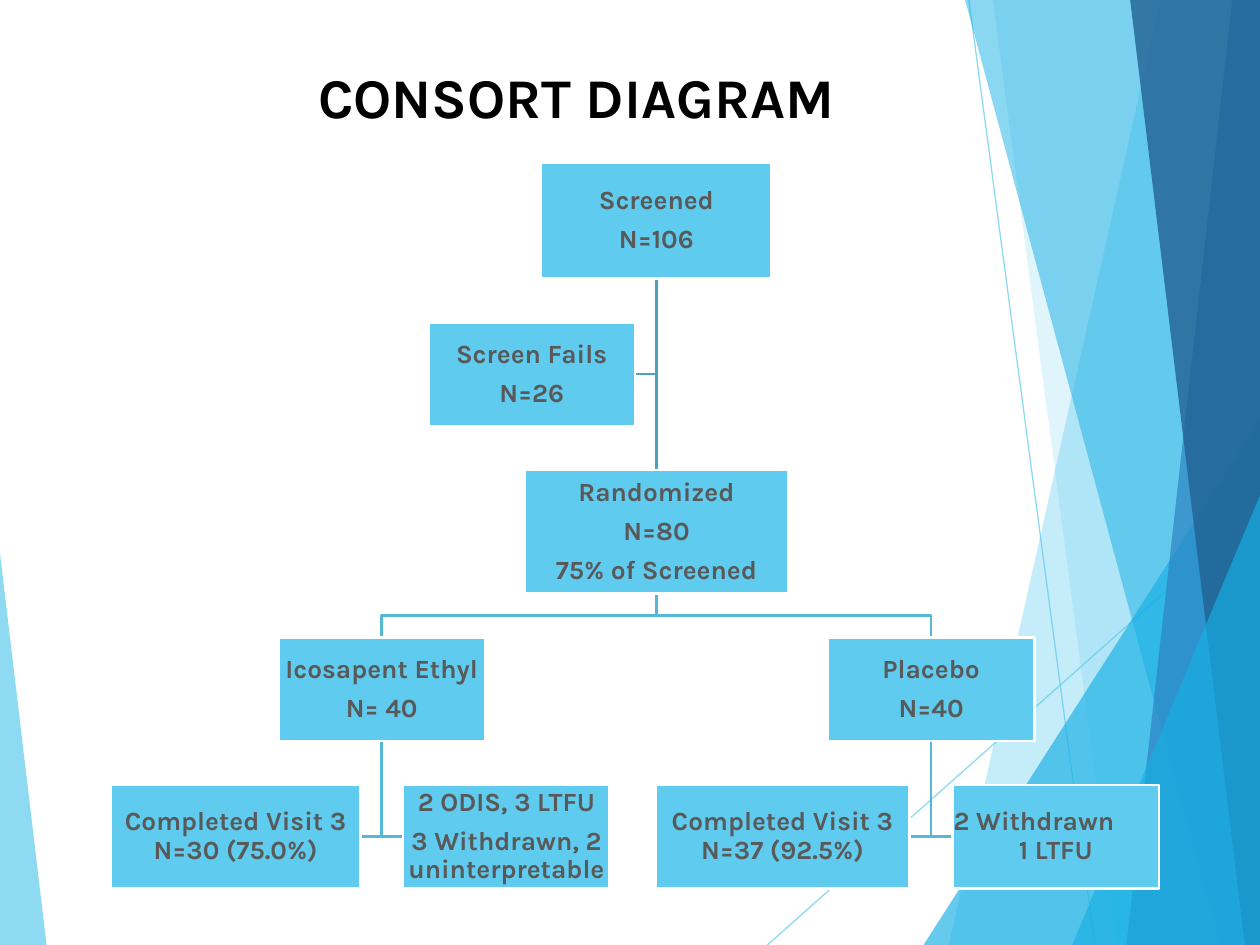
from lxml.etree import SubElement
from pptx import Presentation
from pptx.dml.color import RGBColor
from pptx.enum.shapes import MSO_CONNECTOR as Connector, MSO_SHAPE as Shape
from pptx.enum.text import MSO_ANCHOR as Anchor, PP_ALIGN as Align
from pptx.oxml.ns import qn
from pptx.util import Inches, Pt

SKY = RGBColor(0x5F, 0xCB, 0xEF)
CYAN = RGBColor(0x17, 0xB0, 0xE4)
BLUE = RGBColor(0x2E, 0x83, 0xC3)
NAVY = RGBColor(0x22, 0x62, 0x92)
TRUNK = RGBColor(0x4C, 0xA3, 0xBF)
BRANCH = RGBColor(0x56, 0xB8, 0xD9)
GREY = RGBColor(0x59, 0x59, 0x59)
BLACK = RGBColor(0, 0, 0)
WHITE = RGBColor(0xFF, 0xFF, 0xFF)
WIDTH, HEIGHT = 10, 7.5

# Background: rays (from, to); facets run from a slanted left edge to the slide's
# right edge (top x, bottom x); triangles stand on the bottom (left, top, width, apex)
RAYS = [((7.69, 0), (8.69, HEIGHT)), ((WIDTH, 4.03), (6.09, HEIGHT))]
BACKDROP = [
    ("facet", (9.21, 7.53), SKY, 36),
    ("facet", (7.88, 8.87), SKY, 20),
    ("triangle", (7.33, 3.33, 2.67, 1), CYAN, 66),
    ("facet", (7.66, 9.68), CYAN, 50),
    ("facet", (9.78, 8.94), BLUE, 70),
    ("facet", (8.97, 9.88), NAVY, 80),
    ("triangle", (8.51, 3.93, 1.49, 1), CYAN, 66),
    ("triangle", (0, 4.39, 0.37, 0), SKY, 70),
]

# Chart: row heights, column axes, boxes (key, row, axis, side of axis, width, lines)
TITLE = "CONSORT DIAGRAM"
TOP, ROW_GAP, AXIS_GAP = 1.29, 0.35, 0.17
ROW_HEIGHTS = [0.92, 0.82, 0.98, 0.82, 0.82]
MAIN, ACTIVE, CONTROL = 5.21, 3.03, 7.39
BOXES = [
    ("screened", 0, MAIN, 0, 1.83, ["Screened", "N=106"]),
    ("randomized", 2, MAIN, 0, 2.09, ["Randomized", "N=80", "75% of Screened"]),
    ("active", 3, ACTIVE, 0, 1.64, ["Icosapent Ethyl", "N= 40"]),
    ("active done", 4, ACTIVE, -1, 1.98, ["Completed Visit 3 N=30 (75.0%)"]),
    ("active lost", 4, ACTIVE, 1, 1.64,
     ["2 ODIS, 3 LTFU", "3 Withdrawn, 2 uninterpretable"]),
    ("placebo", 3, CONTROL, 0, 1.64, ["Placebo", "N=40"]),
    ("placebo done", 4, CONTROL, -1, 2.02, ["Completed Visit 3 N=37 (92.5%)"]),
    ("placebo lost", 4, CONTROL, 1, 1.64, ["2 Withdrawn", "1 LTFU"]),
    ("fails", 1, MAIN, -1, 1.64, ["Screen Fails", "N=26"]),
]
FORKS = [("randomized", "active"), ("randomized", "placebo")]
ELBOWS = [
    ("screened", "fails", TRUNK),
    ("active", "active done", BRANCH), ("active", "active lost", BRANCH),
    ("placebo", "placebo done", BRANCH), ("placebo", "placebo lost", BRANCH),
]

deck = Presentation()
deck.slide_width, deck.slide_height = Inches(WIDTH), Inches(HEIGHT)
slide = deck.slides.add_slide(deck.slide_layouts[6])
shapes = slide.shapes


def set_alpha(element, percent):
    colour = next(element.iter(qn("a:srgbClr")))
    SubElement(colour, qn("a:alpha"), val=str(percent * 1000))


def polyline(points, close):
    builder = shapes.build_freeform(*points[0])
    builder.add_line_segments(points[1:], close=close)
    outline = builder.convert_to_shape()
    outline.shadow.inherit = False
    return outline


def straight(start, end, colour, weight):
    line = shapes.add_connector(Connector.STRAIGHT, *start, *end)
    line.line.color.rgb, line.line.width = colour, Pt(weight)
    SubElement(line._element.spPr, qn("a:effectLst"))
    return line


def write(paragraph, text, size, colour):
    run = paragraph.add_run()
    run.text = text
    run.font.color.rgb = colour
    paragraph.alignment = Align.CENTER
    for name, value in {"name": "Karla", "size": Pt(size), "bold": True}.items():
        setattr(run.font, name, value)


# Background
for start, end in RAYS:
    ray = straight(map(Inches, start), map(Inches, end), SKY, 0.75)
    set_alpha(ray._element, 70)
for kind, place, colour, alpha in BACKDROP:
    if kind == "facet":
        top_x, bottom_x = place
        corners = [(top_x, 0), (WIDTH, 0), (WIDTH, HEIGHT), (bottom_x, HEIGHT)]
        piece = polyline([(Inches(x), Inches(y)) for x, y in corners], True)
    else:
        left, top, width, apex = place
        piece = shapes.add_shape(Shape.ISOSCELES_TRIANGLE, Inches(left), Inches(top),
                                 Inches(width), Inches(HEIGHT - top))
        piece.adjustments[0] = apex
        piece.shadow.inherit = False
    piece.fill.solid()
    piece.fill.fore_color.rgb = colour
    piece.line.fill.background()
    set_alpha(piece._element, alpha)

# Title
title = shapes.add_textbox(Inches(1.05), Inches(0.45), Inches(7.05), Inches(0.7))
title.text_frame.word_wrap = True
write(title.text_frame.paragraphs[0], TITLE, 32, BLACK)

# Boxes
row_tops = [TOP + sum(ROW_HEIGHTS[:i]) + i * ROW_GAP for i in range(len(ROW_HEIGHTS))]
boxes = {}
for key, row, axis, side, width, lines in BOXES:
    left = axis - width / 2 + side * (AXIS_GAP + width / 2)
    box = shapes.add_shape(Shape.RECTANGLE, Inches(left), Inches(row_tops[row]),
                           Inches(width), Inches(ROW_HEIGHTS[row]))
    boxes[key] = box
    box.shadow.inherit = False
    box.fill.solid()
    box.fill.fore_color.rgb = SKY
    box.line.color.rgb, box.line.width = WHITE, Pt(1.5)
    frame = box.text_frame
    frame.word_wrap, frame.vertical_anchor = True, Anchor.MIDDLE
    for edge in ("left", "top", "right", "bottom"):
        setattr(frame, f"margin_{edge}", Inches(0.01))
    for i, text in enumerate(lines):
        paragraph = frame.paragraphs[0] if i == 0 else frame.add_paragraph()
        write(paragraph, text, 15, GREY)
        paragraph.line_spacing, paragraph.space_after = 0.9, Pt(6)

# The withdrawal note starts at the left edge, with its lines set tight
note = boxes["placebo lost"].text_frame.paragraphs[0]
note.alignment, note.space_after = Align.LEFT, Pt(0)


# Links, placed behind the boxes
def foot(box):
    return box.left + box.width // 2, box.top + box.height


links = []
for parent, child, colour in ELBOWS:
    x, y = foot(boxes[parent])
    target = boxes[child]
    side_x = target.left if target.left > x else target.left + target.width
    side_y = target.top + target.height // 2
    links.append((polyline([(x, y), (x, side_y), (side_x, side_y)], False), colour))
for parent, child in FORKS:
    x, y = foot(boxes[parent])
    end_x, end_y = foot(boxes[child])[0], boxes[child].top
    middle = (y + end_y) // 2
    fork = polyline([(x, y), (x, middle), (end_x, middle), (end_x, end_y)], False)
    links.append((fork, BRANCH))
for link, colour in links:
    link.fill.background()
    link.line.color.rgb, link.line.width = colour, Pt(1.5)

trunk = straight((0, 0), (0, 0), TRUNK, 1.5)
trunk.begin_connect(boxes["screened"], 2)
trunk.end_connect(boxes["randomized"], 0)
for link in [link for link, _ in links] + [trunk]:
    boxes["screened"]._element.addprevious(link._element)

deck.save("out.pptx")
